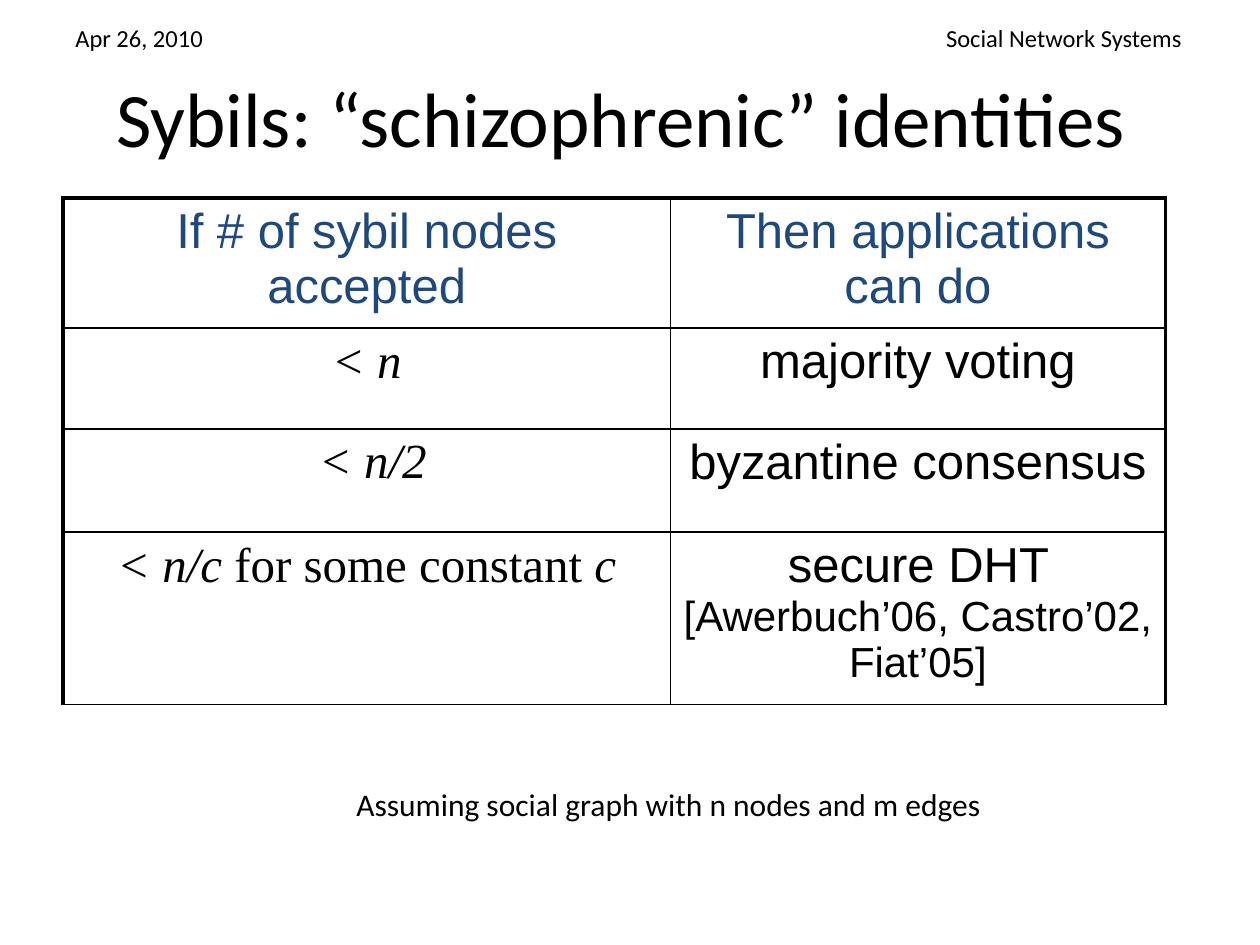
from lxml.etree import SubElement
from pptx import Presentation
from pptx.dml.color import RGBColor
from pptx.enum.text import MSO_ANCHOR, PP_ALIGN
from pptx.oxml.ns import qn
from pptx.util import Inches, Pt

BLACK = RGBColor(0x00, 0x00, 0x00)
NAVY = RGBColor(0x1F, 0x49, 0x7D)
SANS, SERIF, BODY = "Arial", "Times New Roman", "Calibri"

CAPTIONS = [
    ("Social Network Systems", 14, (7.41, 0.13, 2.09, 0.34)),
    ("Apr 26, 2010", 14, (0.5, 0.13, 1.23, 0.34)),
    ("Assuming social graph with n nodes and m edges", 18, (2.73, 6.18, 5.21, 0.4)),
]
TITLE = ("Sybils: “schizophrenic” identities ", 44, (0.5, 0.3, 9, 1.25))

HEADER = (SANS, 28, NAVY, False)
USE = (SANS, 28, BLACK, False)
CITATION = (SANS, 24, BLACK, False)
FORMULA = (SERIF, 28, BLACK, True)
WORDS = (SERIF, 28, BLACK, False)
BOUNDS = [
    ([("If # of sybil nodes accepted", HEADER)], [("Then applications can do", HEADER)]),
    ([("< n", FORMULA)], [("majority voting", USE)]),
    ([(" < n/2", FORMULA)], [("byzantine consensus ", USE)]),
    (
        [("< n/c ", FORMULA), ("for some constant", WORDS), (" c", FORMULA)],
        [("secure DHT ", USE), ("[Awerbuch’06, Castro’02, Fiat’05]", CITATION)],
    ),
]
TABLE_BOX = (0.5, 1.57, 8.75, 4.02)
COLUMN_WIDTHS = [4.82, 3.93]
ROW_HEIGHTS = [0.99, 0.8, 0.82, 0.82]
OUTER_LINE, INNER_LINE = 2.25, 1


def add_run(paragraph, text, style):
    run = paragraph.add_run()
    run.text = text
    run.font.name, run.font.size = style[0], Pt(style[1])
    run.font.color.rgb, run.font.italic = style[2], style[3]


def add_text(slide, text, size, box, wrap=False):
    frame = slide.shapes.add_textbox(*map(Inches, box)).text_frame
    frame.word_wrap = wrap
    add_run(frame.paragraphs[0], text, (BODY, size, BLACK, False))
    return frame


def set_borders(cell, widths):
    properties = cell._tc.get_or_add_tcPr()
    for side, width in widths.items():
        line = SubElement(properties, qn(f"a:{side}"), w=str(Pt(width)))
        fill = SubElement(line, qn("a:solidFill"))
        SubElement(fill, qn("a:srgbClr"), val=str(BLACK))


def fill_cell(cell, runs, borders):
    paragraph = cell.text_frame.paragraphs[0]
    paragraph.alignment = PP_ALIGN.CENTER
    spacing = SubElement(paragraph._p.get_or_add_pPr(), qn("a:spcBef"))
    SubElement(spacing, qn("a:spcPct"), val="30000")
    for text, style in runs:
        add_run(paragraph, text, style)
    set_borders(cell, borders)
    cell.fill.background()


def add_bounds_table(slide):
    frame = slide.shapes.add_table(len(BOUNDS), len(COLUMN_WIDTHS), *map(Inches, TABLE_BOX))
    table = frame.table
    table.first_row = table.horz_banding = False
    for column, width in zip(table.columns, COLUMN_WIDTHS):
        column.width = Inches(width)
    for row, height in zip(table.rows, ROW_HEIGHTS):
        row.height = Inches(height)
    frame.height = Inches(TABLE_BOX[3])
    last_column = len(COLUMN_WIDTHS) - 1
    for r, bound in enumerate(BOUNDS):
        for c, runs in enumerate(bound):
            borders = {
                "lnL": OUTER_LINE if c == 0 else INNER_LINE,
                "lnR": OUTER_LINE if c == last_column else INNER_LINE,
                "lnT": OUTER_LINE if r == 0 else INNER_LINE,
                "lnB": INNER_LINE,
            }
            fill_cell(table.cell(r, c), runs, borders)


def main():
    deck = Presentation()
    deck.slide_width, deck.slide_height = Inches(10), Inches(7.5)
    slide = deck.slides.add_slide(deck.slide_layouts[6])
    for caption in CAPTIONS:
        add_text(slide, *caption)
    title = add_text(slide, *TITLE, wrap=True)
    title.vertical_anchor = MSO_ANCHOR.MIDDLE
    title.paragraphs[0].alignment = PP_ALIGN.CENTER
    add_bounds_table(slide)
    deck.save("out.pptx")


if __name__ == "__main__":
    main()
